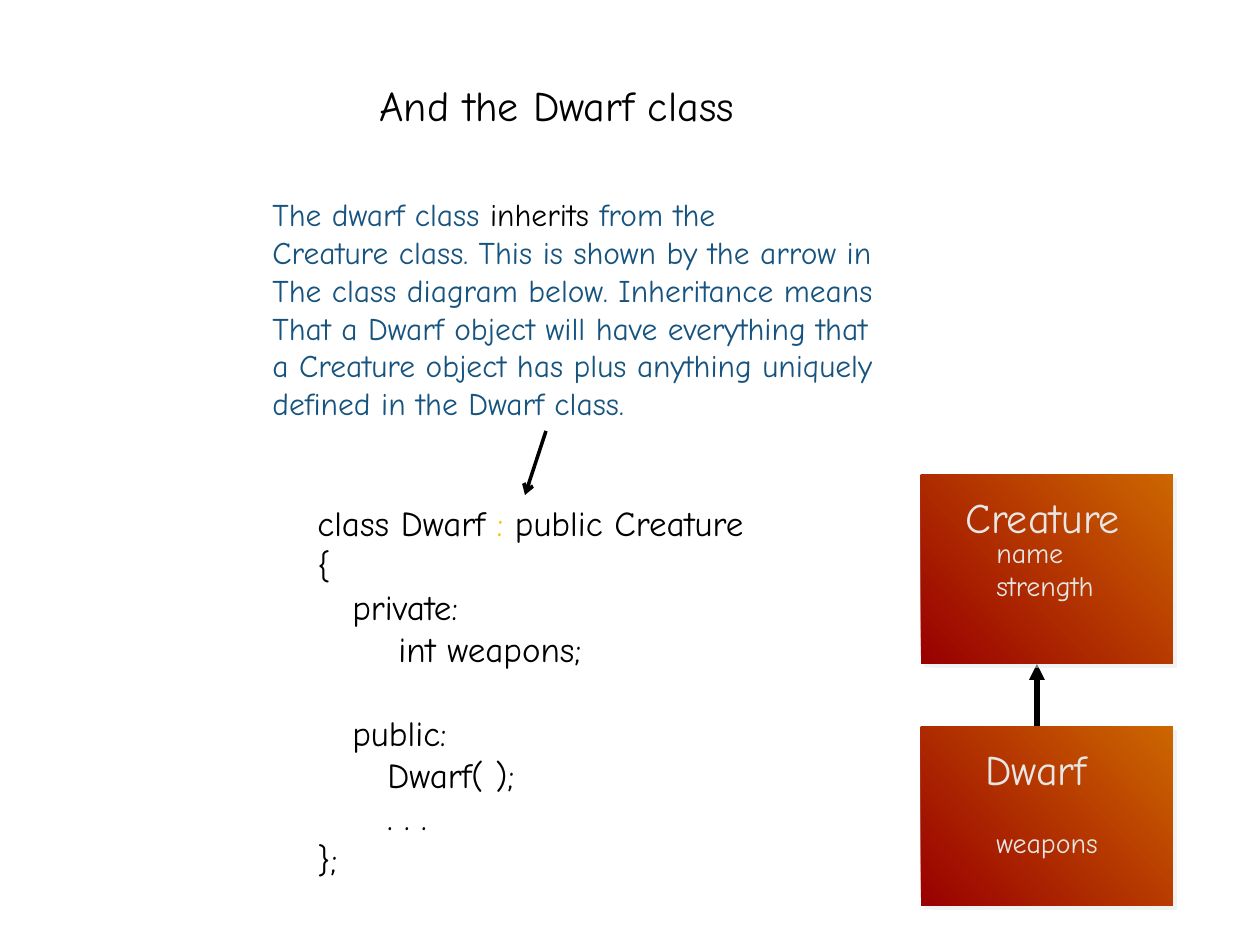
"""Build a slide on class inheritance with a code sample and a class diagram."""
from lxml.etree import SubElement
from pptx import Presentation
from pptx.dml.color import RGBColor
from pptx.enum.shapes import MSO_CONNECTOR, MSO_SHAPE
from pptx.enum.text import MSO_ANCHOR, MSO_AUTO_SIZE, PP_ALIGN
from pptx.oxml.ns import qn
from pptx.util import Emu, Pt

BLACK = RGBColor(0x00, 0x00, 0x00)
BLUE = RGBColor(0x16, 0x53, 0x7F)
GOLD = RGBColor(0xFF, 0xC0, 0x00)
LIGHT = RGBColor(0xE7, 0xE6, 0xE6)
DARK_RED = RGBColor(0x99, 0x00, 0x00)
ORANGE = RGBColor(0xCC, 0x66, 0x00)
FONT = "Comic Neue"

TITLE = "And the Dwarf class"
EXPLANATION = [
    [("The dwarf class ", BLUE), ("inherits ", BLACK), ("from the", BLUE)],
    "Creature class. This is shown by the arrow in",
    "The class diagram below. Inheritance means",
    "That a Dwarf object will have everything that",
    "a Creature object has plus anything uniquely",
    "defined in the Dwarf class.",
]
CODE = [
    [("class Dwarf ", BLACK), (":", GOLD), (" public Creature", BLACK)],
    "{", "private:", "int weapons;", "public:", "Dwarf( );", ". . .", "};",
]
CODE_INDENTS = [0, 0, 35, 81, 35, 70, 70, 0]
CODE_GAP_BEFORE = "public:"
CLASSES = [
    ((921, 475, 252, 189), [
        (["Creature"], (953, 485, 200, 63), 24),
        (["name", "strength"], (984, 529, 141, 81), 16),
    ]),
    ((921, 727, 252, 179), [
        (["Dwarf"], (973, 737, 149, 63), 24),
        (["weapons"], (984, 819, 134, 47), 16),
    ]),
]
INHERITANCE_ARROW = ((1037, 758), (1037, 664), 3, "triangle")
CODE_ARROW = ((546, 431), (525, 495), 2, "arrow")


def px(length):
    return Emu(round(length * 914400 / 126))


def write(shape, lines, size, color):
    frame = shape.text_frame
    frame.word_wrap = True
    frame.auto_size = MSO_AUTO_SIZE.NONE
    frame.vertical_anchor = MSO_ANCHOR.TOP
    for index, line in enumerate(lines):
        paragraph = frame.paragraphs[0] if index == 0 else frame.add_paragraph()
        paragraph.alignment = PP_ALIGN.LEFT
        paragraph.font.name = FONT
        paragraph.font.size = Pt(size)
        if isinstance(line, str):
            paragraph.font.color.rgb = color
            paragraph.add_run().text = line
            continue
        for text, run_color in line:
            run = paragraph.add_run()
            run.text = text
            run.font.color.rgb = run_color


def add_title(slide, text, box):
    title = slide.shapes.title
    title.left, title.top, title.width, title.height = map(px, box)
    write(title, [text], 24, BLACK)


def add_text(slide, lines, box, size, color):
    shape = slide.shapes.add_textbox(*map(px, box))
    write(shape, lines, size, color)
    return shape


def add_code(slide, box):
    shape = add_text(slide, CODE, box, 20, BLACK)
    for paragraph, indent in zip(shape.text_frame.paragraphs, CODE_INDENTS):
        properties = paragraph._p.get_or_add_pPr()
        properties.set("marL", str(px(indent)))
        properties.set("indent", "0")
        if paragraph.text == CODE_GAP_BEFORE:
            paragraph.space_before = Pt(24)


def add_class_box(slide, box, labels):
    shape = slide.shapes.add_shape(MSO_SHAPE.RECTANGLE, *map(px, box))
    shape.line.fill.background()
    shape.fill.gradient()
    shape.fill.gradient_angle = 45
    for stop, color, position in zip(shape.fill.gradient_stops, (DARK_RED, ORANGE), (0, 1)):
        stop.color.rgb = color
        stop.position = position
    shape.shadow.inherit = False
    effects = shape.element.spPr.find(qn("a:effectLst"))
    shadow = SubElement(effects, qn("a:outerShdw"), dist=str(Pt(2.8)), dir="2700000",
                        algn="ctr", rotWithShape="0")
    shadow_color = SubElement(shadow, qn("a:srgbClr"), val=str(LIGHT))
    SubElement(shadow_color, qn("a:alpha"), val="50000")
    for lines, label_box, size in labels:
        add_text(slide, lines, label_box, size, LIGHT)


def add_arrow(slide, start, end, width, head):
    arrow = slide.shapes.add_connector(MSO_CONNECTOR.STRAIGHT, *map(px, start + end))
    arrow.line.color.rgb = BLACK
    arrow.line.width = Pt(width)
    properties = arrow.element.spPr
    SubElement(properties.find(qn("a:ln")), qn("a:tailEnd"), type=head)
    SubElement(properties, qn("a:effectLst"))


def main():
    presentation = Presentation()
    presentation.slide_width, presentation.slide_height = px(1260), px(945)
    slide = presentation.slides.add_slide(presentation.slide_layouts[5])
    add_title(slide, TITLE, (367, 73, 428, 63))
    add_text(slide, EXPLANATION, (260, 189, 717, 242), 18, BLUE)
    add_code(slide, (305, 495, 524, 394))
    add_arrow(slide, *INHERITANCE_ARROW)
    for box, labels in CLASSES:
        add_class_box(slide, box, labels)
    add_arrow(slide, *CODE_ARROW)
    presentation.save("out.pptx")


if __name__ == "__main__":
    main()
